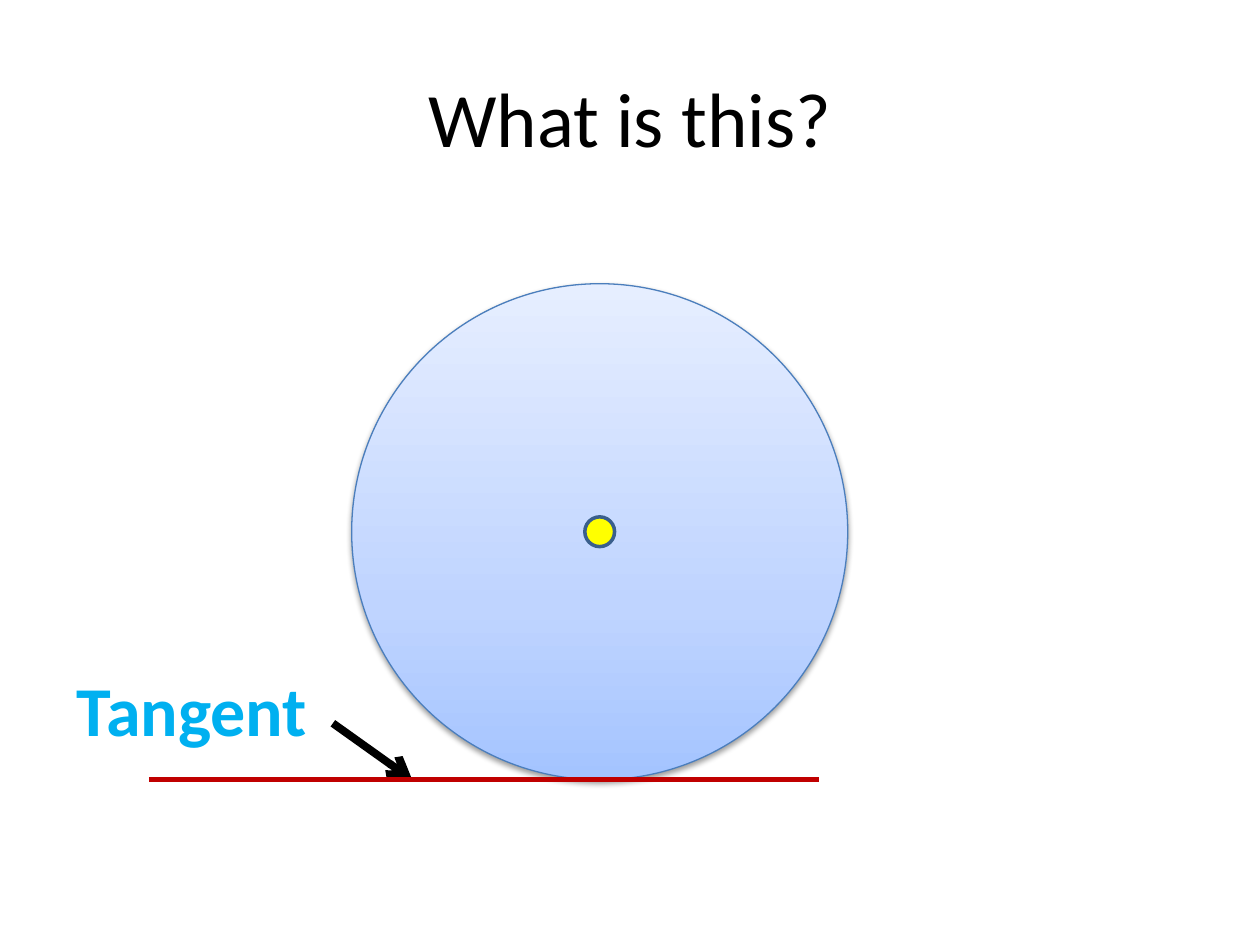
import copy

import pptx
import pptx.dml.color
import pptx.enum.shapes
import pptx.enum.text
import pptx.oxml
import pptx.oxml.ns
import pptx.util

Cm = pptx.util.Cm
Pt = pptx.util.Pt
RGB = pptx.dml.color.RGBColor.from_string

THEME = {
    "font": "Calibri",
    "title": {"size": Pt(44), "bold": False, "color": "000000"},
    "label": {"size": Pt(40), "bold": True, "color": "00B0F0"},
    "circle_stops": [(0, "A4C4FF"), (0.35, "BFD4FF"), (1, "E6EEFF")],
    "circle_line": ("4B7EBC", 0.75),
    "centre_fill": "FFFF00",
    "centre_line": ("3A5F8C", 2),
    "arrow": ("000000", 4.5),
    "tangent": ("C00000", 3),
}
NAMESPACE = pptx.oxml.ns.nsdecls("a")


def write_text(shape, text, style, frame_format):
    frame = shape.text_frame
    for name, value in frame_format.items():
        setattr(frame, name, value)
    paragraph = frame.paragraphs[0]
    run = paragraph.add_run()
    run.text = text
    run.font.color.rgb = RGB(style["color"])
    for name, value in {"name": THEME["font"], "size": style["size"], "bold": style["bold"]}.items():
        setattr(run.font, name, value)
    return paragraph


def set_line(shape, style):
    color, width = style
    shape.line.color.rgb = RGB(color)
    shape.line.width = Pt(width)


presentation = pptx.Presentation()
presentation.slide_width = Cm(25.4)
presentation.slide_height = Cm(19.05)
slide = presentation.slides.add_slide(presentation.slide_layouts[5])
shapes = slide.shapes

# Title
title = shapes.title
for name, value in {"left": 1.27, "top": 0.76, "width": 22.86, "height": 3.18}.items():
    setattr(title, name, Cm(value))
paragraph = write_text(title, "What is this?", THEME["title"],
                       {"vertical_anchor": pptx.enum.text.MSO_ANCHOR.MIDDLE})
paragraph.alignment = pptx.enum.text.PP_ALIGN.CENTER

# Circle and its centre point share one middle
middle_x, middle_y, radius, point_radius = 12.09, 10.72, 5, 0.3
circle, centre = [
    shapes.add_shape(pptx.enum.shapes.MSO_SHAPE.OVAL, Cm(middle_x - r), Cm(middle_y - r), Cm(2 * r), Cm(2 * r))
    for r in (radius, point_radius)
]
for shape, line in ((circle, THEME["circle_line"]), (centre, THEME["centre_line"])):
    shape.shadow.inherit = False
    set_line(shape, line)
centre.fill.solid()
centre.fill.fore_color.rgb = RGB(THEME["centre_fill"])

# Circle gradient: a third stop is added to the two given ones
circle.fill.gradient()
circle.fill.gradient_angle = 90
stop_list = circle.element.spPr.find(".//" + pptx.oxml.ns.qn("a:gsLst"))
stop_list.append(copy.deepcopy(stop_list[-1]))
for stop, (position, color) in zip(circle.fill.gradient_stops, THEME["circle_stops"]):
    stop.position = position
    stop.color.rgb = RGB(color)

# Soft shadow below the circle
effects = circle.element.spPr.find(pptx.oxml.ns.qn("a:effectLst"))
effects.append(pptx.oxml.parse_xml(
    f'<a:outerShdw {NAMESPACE} blurRad="{Pt(3.1)}" dist="{Pt(1.6)}" dir="5400000" rotWithShape="0">'
    '<a:srgbClr val="000000"><a:alpha val="38000"/></a:srgbClr></a:outerShdw>'))

# Label
label = shapes.add_textbox(Cm(1.3), Cm(13.31), Cm(14.63), Cm(3.33))
write_text(label, "Tangent", THEME["label"], {"word_wrap": True})

# Arrow and tangent both end on the foot of the circle
tangent_y = middle_y + radius
arrow, tangent = [
    shapes.add_connector(pptx.enum.shapes.MSO_CONNECTOR.STRAIGHT, Cm(x1), Cm(y1), Cm(x2), Cm(tangent_y))
    for x1, y1, x2 in ((6.71, 14.58, 8.31), (3, tangent_y, 16.51))
]
for connector, line in ((arrow, THEME["arrow"]), (tangent, THEME["tangent"])):
    set_line(connector, line)
    connector.element.spPr.append(pptx.oxml.parse_xml(f"<a:effectLst {NAMESPACE}/>"))
arrow.line.fill.solid()
arrow.line.color.rgb = RGB(THEME["arrow"][0])
arrow_line = arrow.element.spPr.find(pptx.oxml.ns.qn("a:ln"))
arrow_line.append(pptx.oxml.parse_xml(f'<a:tailEnd {NAMESPACE} type="arrow"/>'))

presentation.save("out.pptx")
